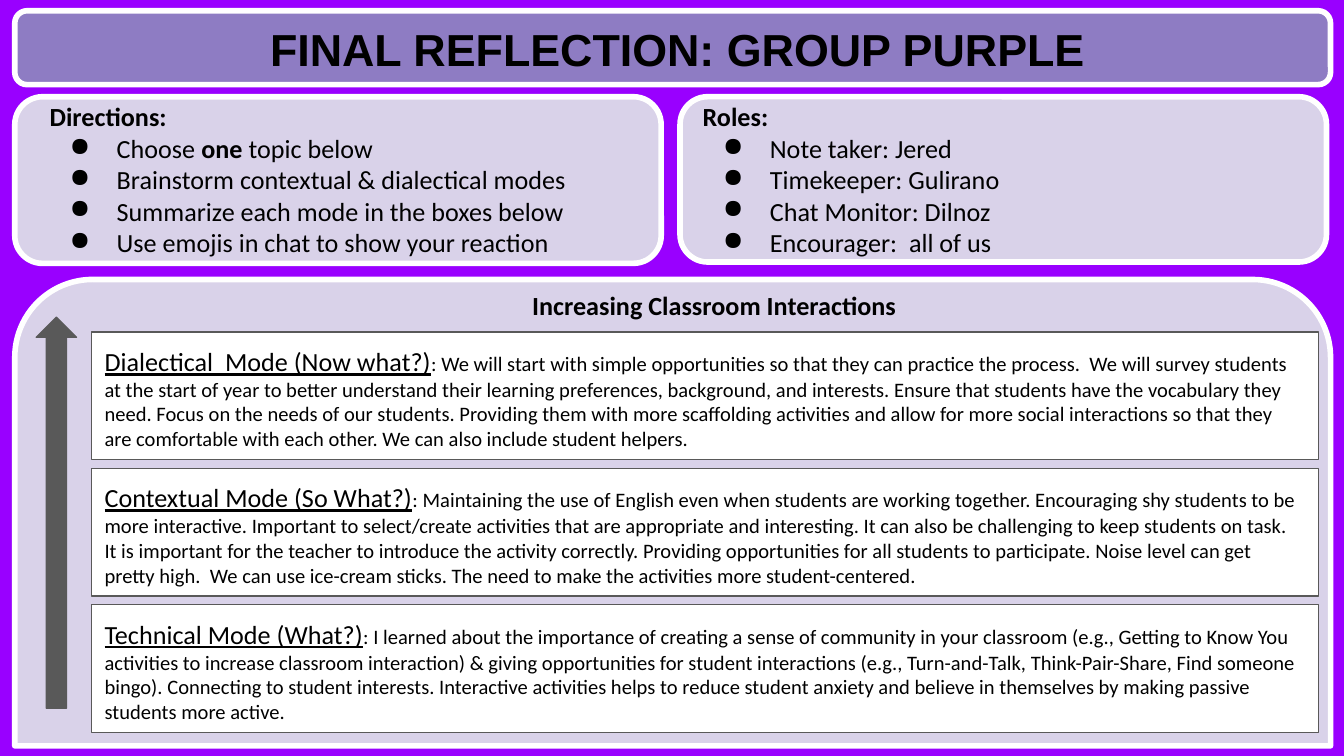
from dataclasses import dataclass

from lxml.etree import SubElement
from pptx import Presentation
from pptx.dml.color import RGBColor
from pptx.enum.shapes import MSO_SHAPE
from pptx.enum.text import MSO_ANCHOR, PP_ALIGN
from pptx.oxml.ns import qn
from pptx.util import Emu, Pt

PX = 4572
PURPLE, VIOLET, LAVENDER = "9900FF", "8E7CC3", "D9D2E9"
WHITE, BLACK, GRAY = "FFFFFF", "000000", "595959"


@dataclass(frozen=True)
class Box:
    left: int
    top: int
    width: int
    height: int

    def emu(self) -> list[Emu]:
        return [Emu(value * PX) for value in (self.left, self.top, self.width, self.height)]


@dataclass(frozen=True)
class Run:
    text: str
    size: int = 14
    bold: bool = False
    underline: bool = False
    font: str = "Calibri"


@dataclass(frozen=True)
class Panel:
    box: Box
    kind: MSO_SHAPE
    adjustments: tuple[float, ...]
    fill: str = LAVENDER
    line: str = WHITE
    line_width: float = 3


@dataclass(frozen=True)
class BulletList:
    box: Box
    heading: str
    items: tuple[tuple[Run, ...], ...]


@dataclass(frozen=True)
class Mode:
    title: str
    body: str


PANELS = (
    Panel(Box(22, 16, 1958, 110), MSO_SHAPE.ROUNDED_RECTANGLE, (0.167,), VIOLET),
    Panel(Box(22, 144, 962, 248), MSO_SHAPE.ROUNDED_RECTANGLE, (0.167,)),
    Panel(Box(22, 416, 1958, 694), MSO_SHAPE.ROUND_2_SAME_RECTANGLE, (0.167, 0)),
    Panel(Box(1012, 144, 962, 246), MSO_SHAPE.ROUNDED_RECTANGLE, (0.167,)),
    Panel(Box(54, 472, 60, 582), MSO_SHAPE.UP_ARROW, (0.5, 0.5), GRAY, GRAY, 0.75),
)

LISTS = (
    BulletList(Box(54, 130, 882, 262), "Directions:", (
        (Run("Choose "), Run("one", bold=True), Run(" topic below")),
        (Run("Brainstorm contextual & dialectical modes"),),
        (Run("Summarize each mode in the boxes below"),),
        (Run("Use emojis in chat to show your reaction"),),
    )),
    BulletList(Box(1026, 130, 882, 262), "Roles:", (
        (Run("Note taker: Jered"),),
        (Run("Timekeeper: Gulirano"),),
        (Run("Chat Monitor: Dilnoz"),),
        (Run("Encourager:  all of us"),),
    )),
)

MODES = (
    Mode("Dialectical  Mode (Now what?)",
         ": We will start with simple opportunities so that they can practice the process.  "
         "We will survey students at the start of year to better understand their learning "
         "preferences, background, and interests. Ensure that students have the vocabulary "
         "they need. Focus on the needs of our students. Providing them with more scaffolding "
         "activities and allow for more social interactions so that they are comfortable with "
         "each other. We can also include student helpers."),
    Mode("Contextual Mode (So What?)",
         ": Maintaining the use of English even when students are working together. "
         "Encouraging shy students to be more interactive. Important to select/create "
         "activities that are appropriate and interesting. It can also be challenging to keep "
         "students on task. It is important for the teacher to introduce the activity "
         "correctly. Providing opportunities for all students to participate. Noise level can "
         "get pretty high.  We can use ice-cream sticks. The need to make the activities more "
         "student-centered."),
    Mode("Technical Mode (What?)",
         ": I learned about the importance of creating a sense of community in your classroom "
         "(e.g., Getting to Know You activities to increase classroom interaction) & giving "
         "opportunities for student interactions (e.g., Turn-and-Talk, Think-Pair-Share, Find "
         "someone bingo). Connecting to student interests. Interactive activities helps to "
         "reduce student anxiety and believe in themselves by making passive students more "
         "active."),
)
MODE_BOX = Box(136, 494, 1826, 190)
MODE_PITCH = 203


def color(value: str) -> RGBColor:
    return RGBColor.from_string(value)


def apply(target, values: dict) -> None:
    for name, value in values.items():
        setattr(target, name, value)


def add_panel(slide, panel: Panel):
    shape = slide.shapes.add_shape(panel.kind, *panel.box.emu())
    shape.shadow.inherit = False
    for index, value in enumerate(panel.adjustments):
        shape.adjustments[index] = value
    shape.fill.solid()
    shape.fill.fore_color.rgb = color(panel.fill)
    shape.line.color.rgb = color(panel.line)
    shape.line.width = Pt(panel.line_width)
    return shape


def prepare_frame(shape):
    inset = Emu(20 * PX)
    frame = shape.text_frame
    apply(frame, {
        "word_wrap": True,
        "vertical_anchor": MSO_ANCHOR.TOP,
        "margin_left": inset,
        "margin_top": inset,
        "margin_right": inset,
        "margin_bottom": inset,
    })
    return frame


def write(paragraph, runs: tuple[Run, ...], alignment: PP_ALIGN = PP_ALIGN.LEFT) -> None:
    paragraph.alignment = alignment
    for item in runs:
        run = paragraph.add_run()
        run.text = item.text
        apply(run.font, {
            "name": item.font,
            "size": Pt(item.size),
            "bold": item.bold,
            "underline": item.underline,
        })
        run.font.color.rgb = color(BLACK)


def add_bullet(paragraph) -> None:
    properties = paragraph._p.get_or_add_pPr()
    properties.set("marL", str(100 * PX))
    properties.set("indent", str(-70 * PX))
    bullet_color = SubElement(properties, qn("a:buClr"))
    SubElement(bullet_color, qn("a:srgbClr"), val=BLACK)
    SubElement(properties, qn("a:buChar"), char="●")


def add_heading(slide, box: Box, run: Run) -> None:
    frame = prepare_frame(slide.shapes.add_textbox(*box.emu()))
    write(frame.paragraphs[0], (run,), PP_ALIGN.CENTER)


def add_list(slide, content: BulletList) -> None:
    frame = prepare_frame(slide.shapes.add_textbox(*content.box.emu()))
    write(frame.paragraphs[0], (Run(content.heading, bold=True),))
    for runs in content.items:
        paragraph = frame.add_paragraph()
        write(paragraph, runs)
        add_bullet(paragraph)


def add_mode(slide, mode: Mode, top: int) -> None:
    box = Box(MODE_BOX.left, top, MODE_BOX.width, MODE_BOX.height)
    shape = add_panel(slide, Panel(box, MSO_SHAPE.RECTANGLE, (), WHITE, GRAY, 0.75))
    runs = (Run(mode.title, underline=True), Run(mode.body, size=11))
    write(prepare_frame(shape).paragraphs[0], runs)


def main() -> None:
    presentation = Presentation()
    apply(presentation, {"slide_width": Emu(2000 * PX), "slide_height": Emu(1125 * PX)})
    slide = presentation.slides.add_slide(presentation.slide_layouts[6])
    slide.background.fill.solid()
    slide.background.fill.fore_color.rgb = color(PURPLE)
    for panel in PANELS:
        add_panel(slide, panel)
    add_heading(slide, Box(36, 12, 1944, 110),
                Run("FINAL REFLECTION: GROUP PURPLE", 24, bold=True, font="Arial"))
    add_heading(slide, Box(150, 410, 1826, 78),
                Run("Increasing Classroom Interactions", bold=True))
    for content in LISTS:
        add_list(slide, content)
    for index, mode in enumerate(MODES):
        add_mode(slide, mode, MODE_BOX.top + index * MODE_PITCH)
    presentation.save("out.pptx")


if __name__ == "__main__":
    main()
